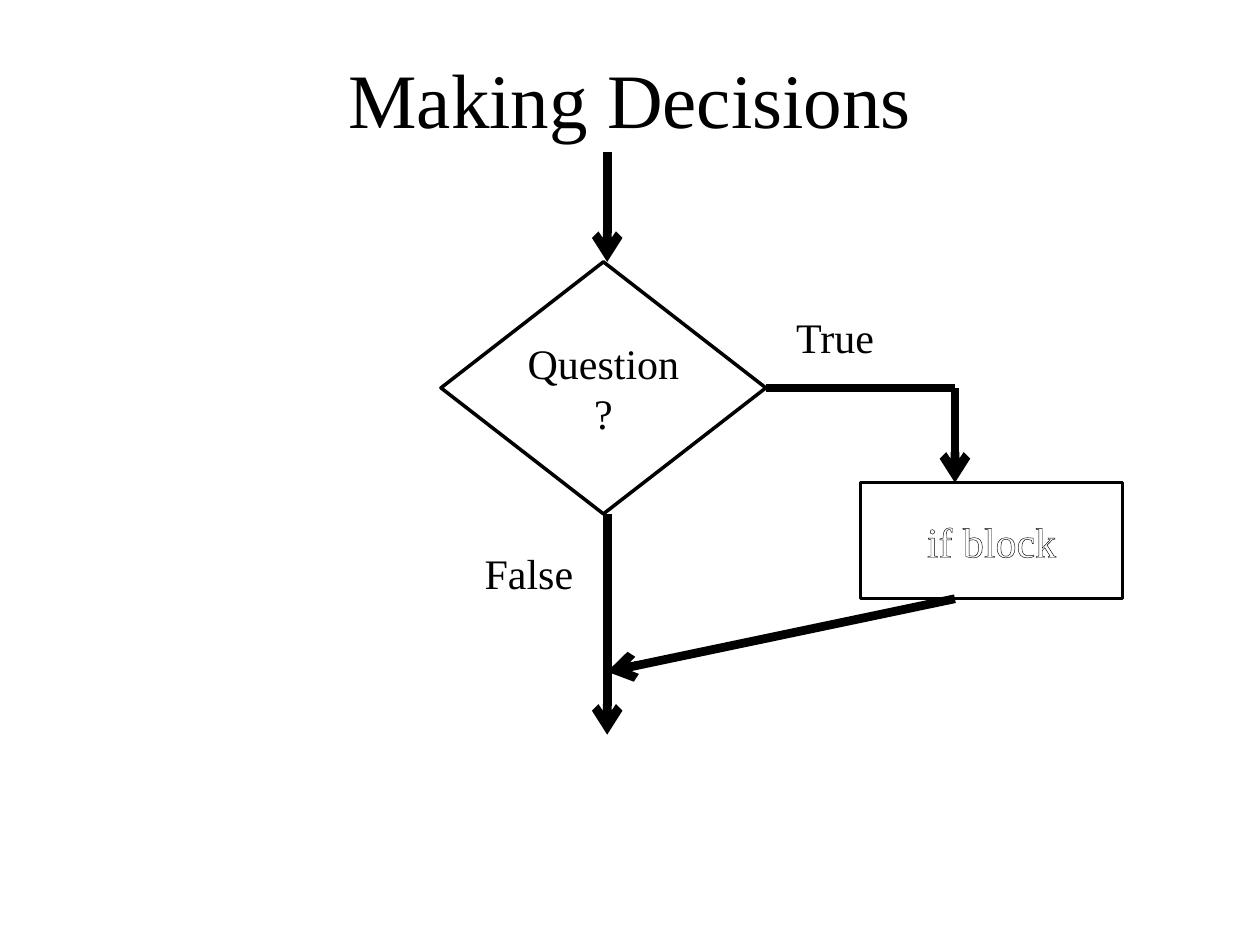
from lxml import etree
from pptx import Presentation
from pptx.dml.color import RGBColor
from pptx.enum.shapes import MSO_CONNECTOR, MSO_SHAPE
from pptx.enum.text import MSO_ANCHOR, MSO_AUTO_SIZE, PP_ALIGN
from pptx.oxml import parse_xml
from pptx.oxml.ns import nsdecls, qn
from pptx.util import Cm, Pt

BLACK, WHITE = "000000", "FFFFFF"


def color(hex_code):
    return RGBColor.from_string(hex_code)


def write(box, text, size=24, ink=BLACK, align=PP_ALIGN.CENTER):
    para = box.text_frame.paragraphs[0]
    para.alignment = align
    span = para.add_run()
    span.text = text
    span.font.name = "Times New Roman"
    span.font.size = Pt(size)
    span.font.color.rgb = color(ink)
    return span


deck = Presentation()
deck.slide_width, deck.slide_height = Cm(25.4), Cm(19.05)
page = deck.slides.add_slide(deck.slide_layouts[5])
page.background.fill.solid()
page.background.fill.fore_color.rgb = color(WHITE)

# Title
title = page.shapes.title
title.left, title.top, title.width, title.height = Cm(1.9), Cm(0.84), Cm(21.6), Cm(2.24)
title.text_frame.vertical_anchor = MSO_ANCHOR.MIDDLE
write(title, "Making Decisions", 44)

# Decision diamond and the block it leads to
nodes = []
for kind, left, top, width, height in [
    (MSO_SHAPE.DIAMOND, 8.89, 5.28, 6.55, 5.08),
    (MSO_SHAPE.RECTANGLE, 17.35, 9.73, 5.28, 2.34),
]:
    node = page.shapes.add_shape(kind, Cm(left), Cm(top), Cm(width), Cm(height))
    node.shadow.inherit = False
    node.fill.background()
    node.line.color.rgb = color(BLACK)
    node.line.width = Pt(2)
    node.text_frame.word_wrap = True
    node.text_frame.vertical_anchor = MSO_ANCHOR.MIDDLE
    nodes.append(node)
question, block = nodes
question.text_frame.margin_left = question.text_frame.margin_right = 0
write(question, "Question?")

# White letters with a thin black outline
block_span = write(block, "if block", ink=WHITE)
outline = parse_xml(
    f'<a:ln {nsdecls("a")} w="9525"><a:solidFill><a:srgbClr val="{BLACK}"/></a:solidFill></a:ln>'
)
block_span.font.fill  # the outline goes ahead of the fill
block_span.font._element.insert(0, outline)

# Flow lines: start, end, arrowhead
main_x, branch_x, branch_y = 12.24, 19.25, 7.82
flows = []
for start, end, arrow in [
    ((branch_x, branch_y), (branch_x, 9.73), True),
    ((15.44, branch_y), (branch_x, branch_y), False),
    ((main_x, 10.36), (main_x, 14.81), True),
    ((branch_x, 12.07), (main_x, 13.54), True),
    ((main_x, 3.07), (main_x, 5.28), True),
]:
    flow = page.shapes.add_connector(MSO_CONNECTOR.STRAIGHT, *map(Cm, start + end))
    flow.line.color.rgb = color(BLACK)
    flow.line.width = Pt(5)
    if arrow:
        etree.SubElement(flow.line._get_or_add_ln(), qn("a:tailEnd"), type="arrow")
    etree.SubElement(flow._element.spPr, qn("a:effectLst"))
    flows.append(flow)
flows[1].begin_connect(question, 3)

# Branch labels
for text, left, top, width in [("True", 15.8, 6.15, 2.08), ("False", 9.52, 10.92, 2.31)]:
    label = page.shapes.add_textbox(Cm(left), Cm(top), Cm(width), Cm(1.3))
    label.text_frame.word_wrap = False
    label.text_frame.auto_size = MSO_AUTO_SIZE.SHAPE_TO_FIT_TEXT
    write(label, text, align=PP_ALIGN.LEFT)

deck.save("out.pptx")
